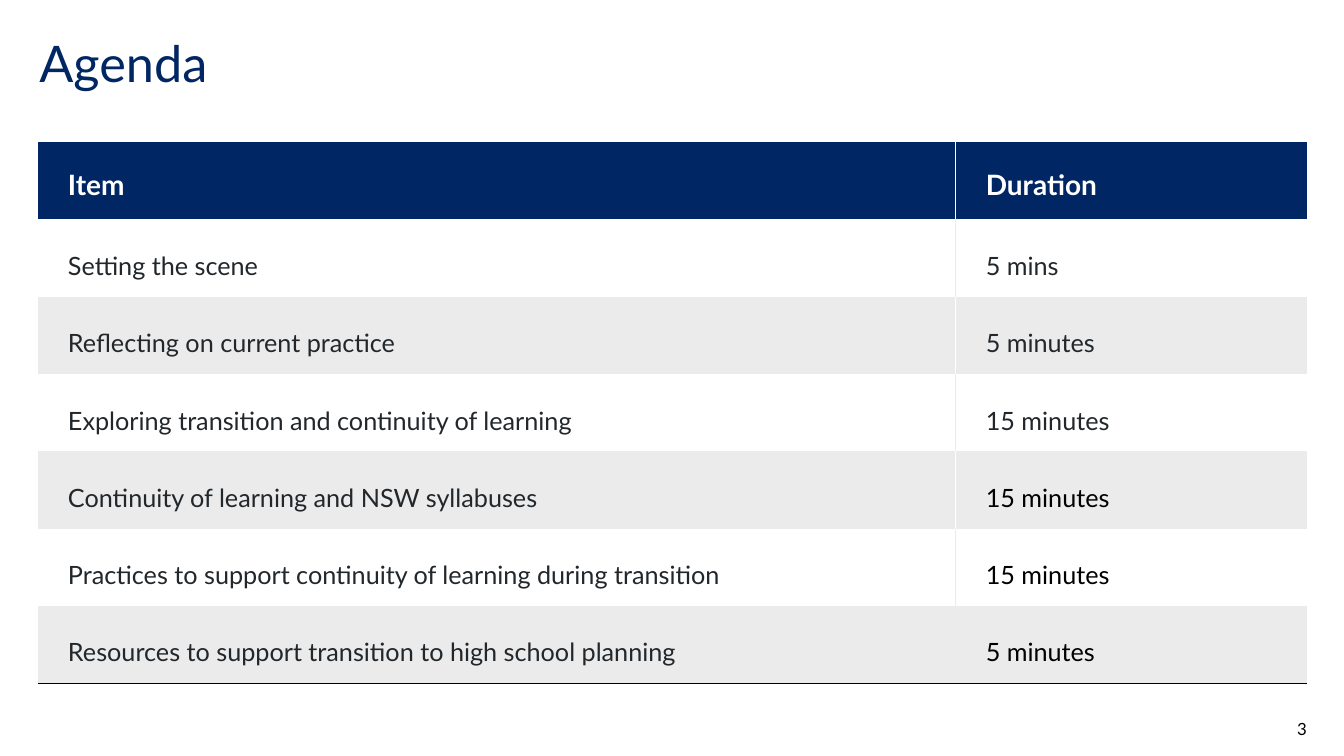
from lxml.etree import SubElement
from pptx import Presentation
from pptx.dml.color import RGBColor as RGB
from pptx.enum.text import MSO_ANCHOR as ANCHOR, PP_ALIGN as ALIGN
from pptx.oxml.ns import qn
from pptx.util import Inches, Pt

FONT = "Lato"
COLORS = {
    "navy": "002664",
    "white": "FFFFFF",
    "grey": "EBEBEB",
    "text": "22272B",
    "black": "000000",
}
NO_STYLE = "{2D5ABB26-0587-4C30-8999-92F81FD0307C}"
HEADER = ("Item", "Duration")
AGENDA = [
    ("Setting the scene", "5 mins", "text"),
    ("Reflecting on current practice", "5 minutes", "text"),
    ("Exploring transition and continuity of learning", "15 minutes", "text"),
    ("Continuity of learning and NSW syllabuses", "15 minutes", "black"),
    ("Practices to support continuity of learning during transition", "15 minutes", "black"),
    ("Resources to support transition to high school planning", "5 minutes", "black"),
]


def color(name):
    return RGB.from_string(COLORS[name])


def style_runs(p, size, name, bold=False):
    for r in p.runs:
        r.font.name = FONT
        r.font.size = Pt(size)
        r.font.bold = bold
        r.font.color.rgb = color(name)


def set_frame(tf):
    tf.margin_left = tf.margin_right = tf.margin_top = tf.margin_bottom = 0
    tf.vertical_anchor = ANCHOR.TOP
    tf.word_wrap = True


def add_title(slide, box, text):
    sp = slide.shapes.title
    sp.left, sp.top, sp.width, sp.height = box
    tf = sp.text_frame
    tf.text = text
    set_frame(tf)
    p = tf.paragraphs[0]
    p.alignment = ALIGN.LEFT
    p.line_spacing = 0.9
    style_runs(p, 36, "navy")


def add_border(cell, side, name):
    ln = SubElement(cell._tc.get_or_add_tcPr(), qn(f"a:ln{side}"), w=str(Pt(1)))
    fill = SubElement(ln, qn("a:solidFill"))
    SubElement(fill, qn("a:srgbClr"), val=COLORS[name])


def fill_cell(cell, text, fill, ink, borders, header):
    for side, name in borders:
        add_border(cell, side, name)
    cell.fill.solid()
    cell.fill.fore_color.rgb = color(fill)
    cell.vertical_anchor = ANCHOR.MIDDLE
    cell.text = text
    p = cell.text_frame.paragraphs[0]
    p._p.get_or_add_pPr().set("marL", str(Inches(0.2)))
    p.line_spacing = 1.2 if header else 1.5
    p.space_after = Pt(12)
    style_runs(p, 20 if header else 18, ink, header)


def add_agenda(slide, box, header, items):
    left, top, width, height = box
    rows = [(*header, "white")] + items
    last = len(rows) - 1
    table = slide.shapes.add_table(len(rows), len(header), *box).table
    table.horz_banding = False
    table._tbl.tblPr.find(qn("a:tableStyleId")).text = NO_STYLE
    table.columns[0].width = int(width * 0.723)
    table.columns[1].width = width - table.columns[0].width
    for i, (item, duration, ink) in enumerate(rows):
        table.rows[i].height = height // len(rows)
        fill = "navy" if i == 0 else "white" if i % 2 else "grey"
        divider = "grey" if i % 2 or i == last else "white"
        bottom = [("B", "black")] if i == last else []
        item_ink = "white" if i == 0 else "text"
        fill_cell(table.cell(i, 0), item, fill, item_ink, [("R", divider)] + bottom, i == 0)
        fill_cell(table.cell(i, 1), duration, fill, ink, [("L", divider)] + bottom, i == 0)


def add_page_number(slide, box, number):
    tf = slide.shapes.add_textbox(*box).text_frame
    tf.text = number
    set_frame(tf)
    p = tf.paragraphs[0]
    p.alignment = ALIGN.RIGHT
    style_runs(p, 12, "black")


def main():
    prs = Presentation()
    prs.slide_width, prs.slide_height = Inches(13.33), Inches(7.5)

    def share(x, y, w, h):
        return (
            int(prs.slide_width * x),
            int(prs.slide_height * y),
            int(prs.slide_width * w),
            int(prs.slide_height * h),
        )

    slide = prs.slides.add_slide(prs.slide_layouts[5])
    add_title(slide, share(0.0293, 0.052, 0.8267, 0.1467), "Agenda")
    add_agenda(slide, share(0.0281, 0.188, 0.9445, 0.716), HEADER, AGENDA)
    add_page_number(slide, share(0.913, 0.9507, 0.0593, 0.0267), "3")
    prs.save("out.pptx")


if __name__ == "__main__":
    main()
